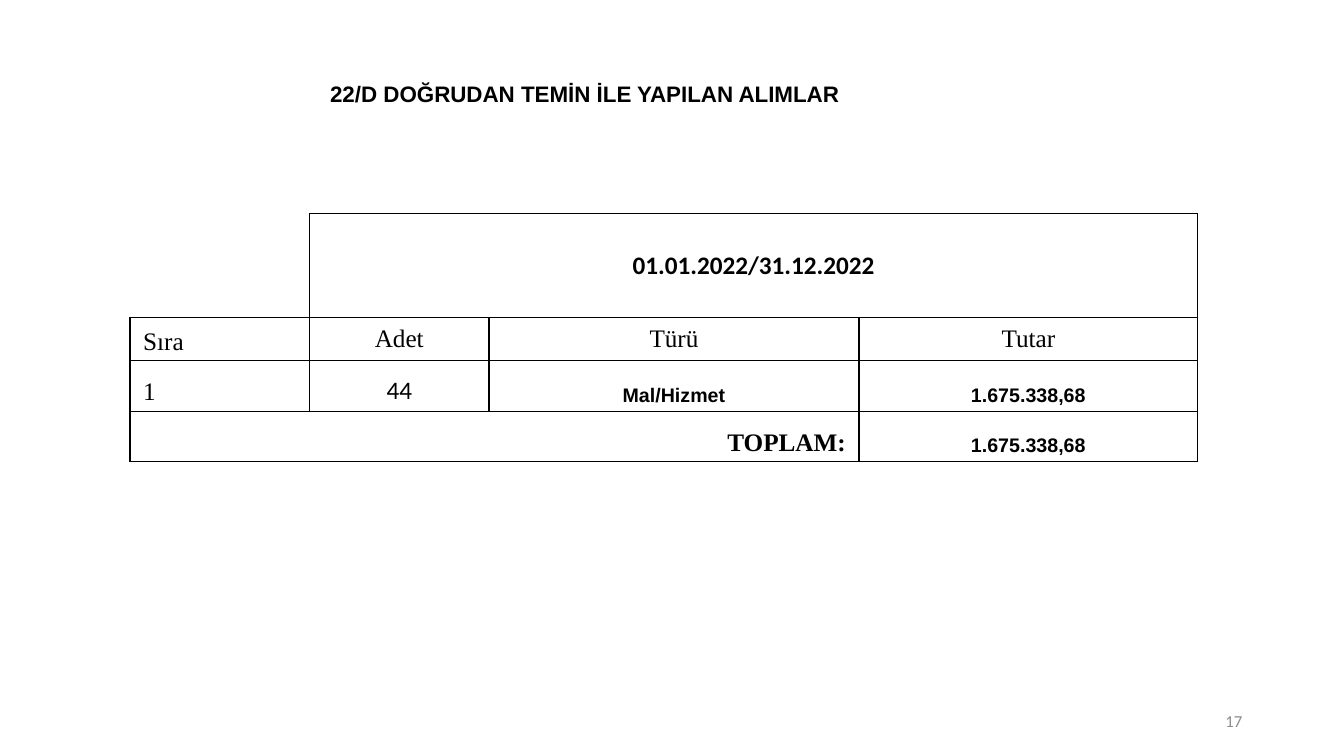
from lxml.etree import SubElement
from pptx import Presentation
from pptx.dml.color import RGBColor
from pptx.enum.text import MSO_ANCHOR, MSO_AUTO_SIZE, PP_ALIGN
from pptx.oxml.ns import qn
from pptx.util import Inches, Pt

COLORS = {"ink": "000000", "page": "8C8C8C"}
TITLE = "22/D DOĞRUDAN TEMİN İLE YAPILAN ALIMLAR"
PAGE = "17"

# style: font, size, bold
PERIOD = ("Calibri", 18, True)
LABEL = ("Times New Roman", 18, False)
COUNT = ("Calibri", 18, False)
AMOUNT = ("Arial", 14, True)
TOTAL = ("Times New Roman", 18, True)

L, C, R = PP_ALIGN.LEFT, PP_ALIGN.CENTER, PP_ALIGN.RIGHT
MID, LOW = MSO_ANCHOR.MIDDLE, MSO_ANCHOR.BOTTOM

# each entry: text, style, alignment, anchor; None is an empty or merged cell
ROWS = [
    [None, ("01.01.2022/31.12.2022", PERIOD, C, MID), None, None],
    [("Sıra", LABEL, L, LOW), ("Adet", LABEL, C, MID),
     ("Türü", LABEL, C, MID), ("Tutar", LABEL, C, MID)],
    [("1", LABEL, L, LOW), ("44", COUNT, C, LOW),
     ("Mal/Hizmet", AMOUNT, C, LOW), ("1.675.338,68", AMOUNT, C, LOW)],
    [("TOPLAM:", TOTAL, R, LOW), None, None, ("1.675.338,68", AMOUNT, C, LOW)],
]
COLUMN_WIDTHS = [1.78, 1.78, 3.67, 3.36]
ROW_HEIGHTS = [1.03, 0.43, 0.5, 0.5]
MERGES = [((0, 1), (0, 3)), ((3, 0), (3, 2))]


def write(frame, text, style, align, anchor, color="ink"):
    font_name, size, bold = style
    frame.vertical_anchor = anchor
    paragraph = frame.paragraphs[0]
    paragraph.alignment = align
    run = paragraph.add_run()
    run.text = text
    run.font.name, run.font.size, run.font.bold = font_name, Pt(size), bold
    run.font.color.rgb = RGBColor.from_string(COLORS[color])


def set_borders(cell, hidden=()):
    """Draw 1 pt edges, leaving out the hidden ones."""
    properties = cell._tc.get_or_add_tcPr()
    for position, edge in enumerate(("lnL", "lnR", "lnT", "lnB")):
        line = properties.makeelement(qn(f"a:{edge}"), {"w": str(Pt(1))})
        properties.insert(position, line)
        if edge in hidden:
            SubElement(line, qn("a:noFill"))
        else:
            fill = SubElement(line, qn("a:solidFill"))
            SubElement(fill, qn("a:srgbClr"), val=COLORS["ink"])


def add_title(slide):
    title = slide.shapes.title
    title.left, title.top = Inches(0.24), Inches(0.74)
    title.width, title.height = Inches(11.12), Inches(0.37)
    frame = title.text_frame
    frame.word_wrap = True
    frame.auto_size = MSO_AUTO_SIZE.SHAPE_TO_FIT_TEXT
    write(frame, TITLE, ("Arial", 16, True), C, MSO_ANCHOR.TOP)


def add_purchases(slide):
    table = slide.shapes.add_table(
        len(ROWS), len(COLUMN_WIDTHS), Inches(1.29), Inches(2.12),
        Inches(sum(COLUMN_WIDTHS)), Inches(sum(ROW_HEIGHTS))).table
    table.first_row = table.horz_banding = False
    for column, width in zip(table.columns, COLUMN_WIDTHS):
        column.width = Inches(width)
    for row, height in zip(table.rows, ROW_HEIGHTS):
        row.height = Inches(height)
    for first, last in MERGES:
        table.cell(*first).merge(table.cell(*last))
    for r, entries in enumerate(ROWS):
        for c, entry in enumerate(entries):
            cell = table.cell(r, c)
            cell.fill.background()
            set_borders(cell, ("lnL", "lnT") if (r, c) == (0, 0) else ())
            cell.margin_left = cell.margin_right = Inches(0.13)
            cell.margin_top = cell.margin_bottom = Inches(0.05)
            if entry:
                text, style, align, anchor = entry
                write(cell.text_frame, text, style, align, anchor)
                cell.vertical_anchor = anchor


def add_page_number(slide):
    box = slide.shapes.add_textbox(
        Inches(9.42), Inches(6.95), Inches(3), Inches(0.4))
    box.text_frame.word_wrap = True
    write(box.text_frame, PAGE, ("Calibri", 12, False), R, MID, "page")


def main():
    deck = Presentation()
    deck.slide_width, deck.slide_height = Inches(13.33), Inches(7.5)
    slide = deck.slides.add_slide(deck.slide_layouts.get_by_name("Title Only"))
    add_title(slide)
    add_purchases(slide)
    add_page_number(slide)
    deck.save("out.pptx")


if __name__ == "__main__":
    main()
